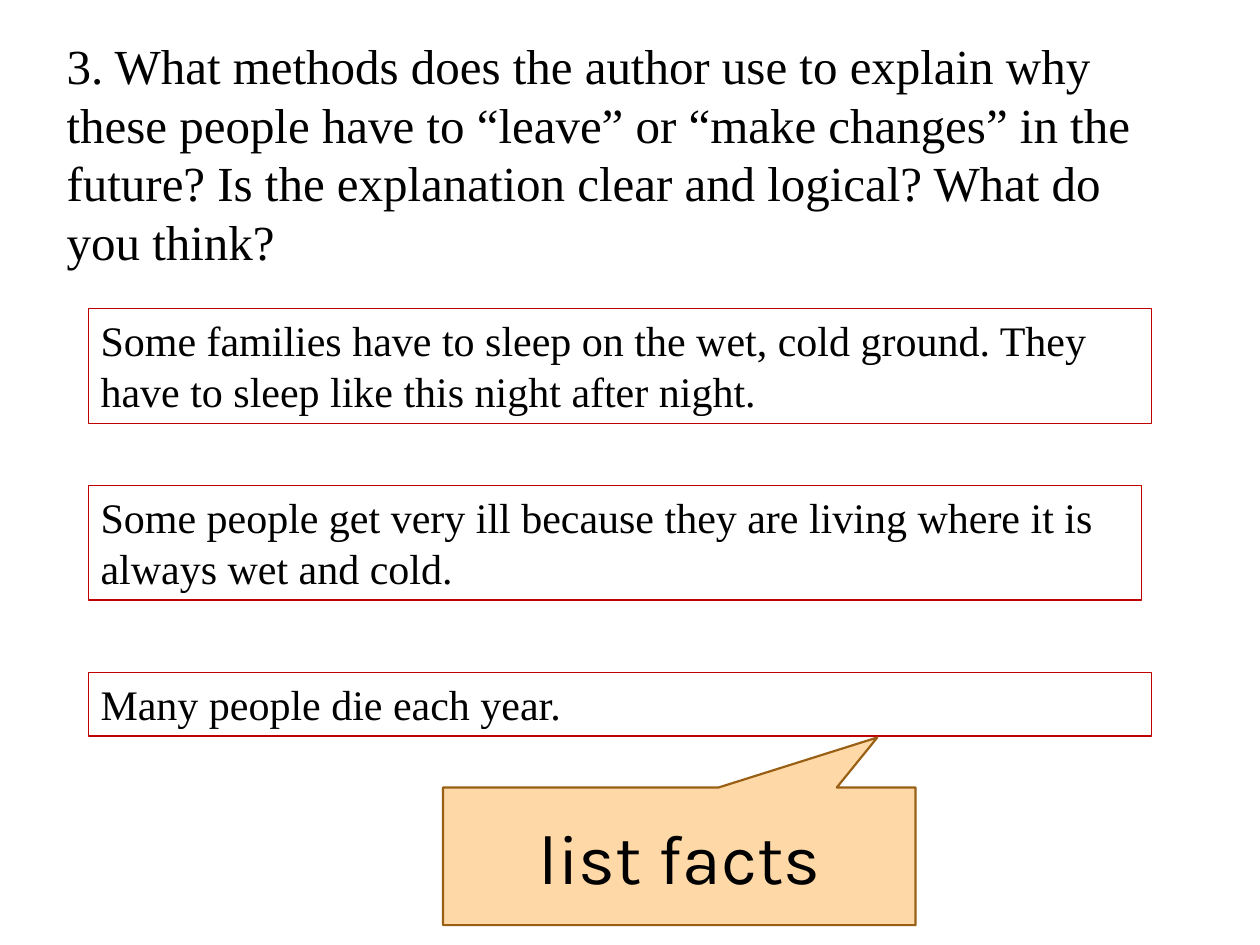
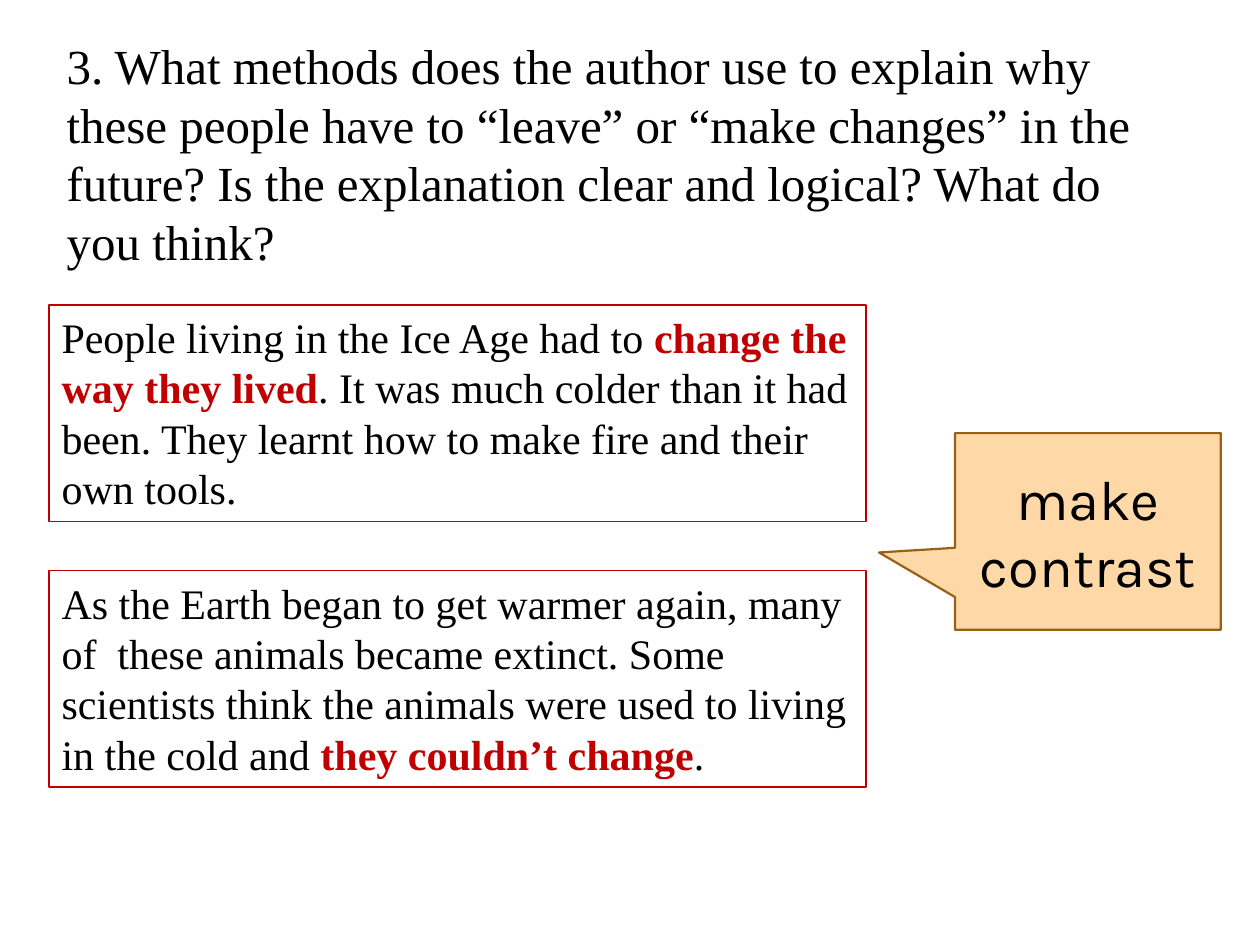
from pptx import Presentation
from pptx.dml.color import RGBColor
from pptx.enum.shapes import MSO_SHAPE
from pptx.enum.text import MSO_ANCHOR, PP_ALIGN
from pptx.util import Pt

RECTANGLE = MSO_SHAPE.RECTANGLE
CALLOUT = MSO_SHAPE.RECTANGULAR_CALLOUT
TOP, MIDDLE = MSO_ANCHOR.TOP, MSO_ANCHOR.MIDDLE
LEFT, CENTER = PP_ALIGN.LEFT, PP_ALIGN.CENTER

BLACK = RGBColor(0x00, 0x00, 0x00)
RED = RGBColor(0xC0, 0x00, 0x00)
PEACH = RGBColor(0xFE, 0xD9, 0xA7)
BROWN = RGBColor(0x99, 0x60, 0x15)
SERIF, SANS = "Times New Roman", "Karla"

QUESTION = (
    "3. What methods does the author use to explain why these people have to "
    "“leave” or “make changes” in the future? Is the explanation clear and "
    "logical? What do you think?"
)

# Each slide: quotes as (box, runs), where a run is (text, is_key_phrase),
# and one callout as (box, pointer adjustments, text, size)
SLIDES = [
    {
        "quotes": [
            ((50.4, 176.4, 607.7, 65.5), [
                ("Some families have to sleep on the wet, cold ground. They have "
                 "to sleep like this night after night.", False)]),
            ((50.4, 277.4, 601.9, 65.5), [
                ("Some people get very ill because they are living where it is "
                 "always wet and cold.", False)]),
            ((50.4, 384.3, 607.7, 36.4), [("Many people die each year.", False)]),
        ],
        "callout": ((253.2, 450, 270, 78.7), (0.419, -0.863), "list facts", 40),
    },
    {
        "quotes": [
            ((28.1, 174.4, 466.8, 123.6), [
                ("People living in the Ice Age had to ", False),
                ("change the way they lived", True),
                (". It was much colder than it had been. They learnt how to make "
                 "fire and their own tools.", False)]),
            ((28.1, 326.2, 466.8, 123.6), [
                ("As the Earth began to get warmer again, many of  these animals "
                 "became extinct. Some scientists think the animals were used to "
                 "living in the cold and ", False),
                ("they couldn’t change", True),
                (".", False)]),
        ],
        "callout": ((545.7, 247.5, 151.9, 112.4), (-0.786, 0.107), "make contrast", 32),
    },
]


def write_text(shape, runs, font_name, size, alignment=LEFT, anchor=TOP):
    frame = shape.text_frame
    frame.word_wrap = True
    frame.vertical_anchor = anchor
    paragraph = frame.paragraphs[0]
    paragraph.alignment = alignment
    for text, is_key_phrase in runs:
        run = paragraph.add_run()
        run.text = text
        run.font.name = font_name
        run.font.size = Pt(size)
        run.font.bold = is_key_phrase
        run.font.color.rgb = RED if is_key_phrase else BLACK


def add_outlined_shape(slide, kind, box, line_color, line_width):
    shape = slide.shapes.add_shape(kind, *[Pt(length) for length in box])
    shape.shadow.inherit = False
    shape.line.color.rgb = line_color
    shape.line.width = Pt(line_width)
    return shape


presentation = Presentation()
presentation.slide_width = Pt(720)
presentation.slide_height = Pt(540)
blank_layout = presentation.slide_layouts[6]

for content in SLIDES:
    slide = presentation.slides.add_slide(blank_layout)

    # Question
    question = slide.shapes.add_textbox(Pt(31), Pt(16.6), Pt(646.6), Pt(147.6))
    write_text(question, [(QUESTION, False)], SERIF, 28)

    # Quotes from the text
    for box, runs in content["quotes"]:
        quote = add_outlined_shape(slide, RECTANGLE, box, RED, 0.75)
        quote.fill.background()
        write_text(quote, runs, SERIF, 24)

    # Callout naming the method
    box, pointer, method, size = content["callout"]
    callout = add_outlined_shape(slide, CALLOUT, box, BROWN, 1.25)
    callout.fill.solid()
    callout.fill.fore_color.rgb = PEACH
    for index, value in enumerate(pointer):
        callout.adjustments[index] = value
    write_text(callout, [(method, False)], SANS, size, CENTER, MIDDLE)

presentation.save("out.pptx")
